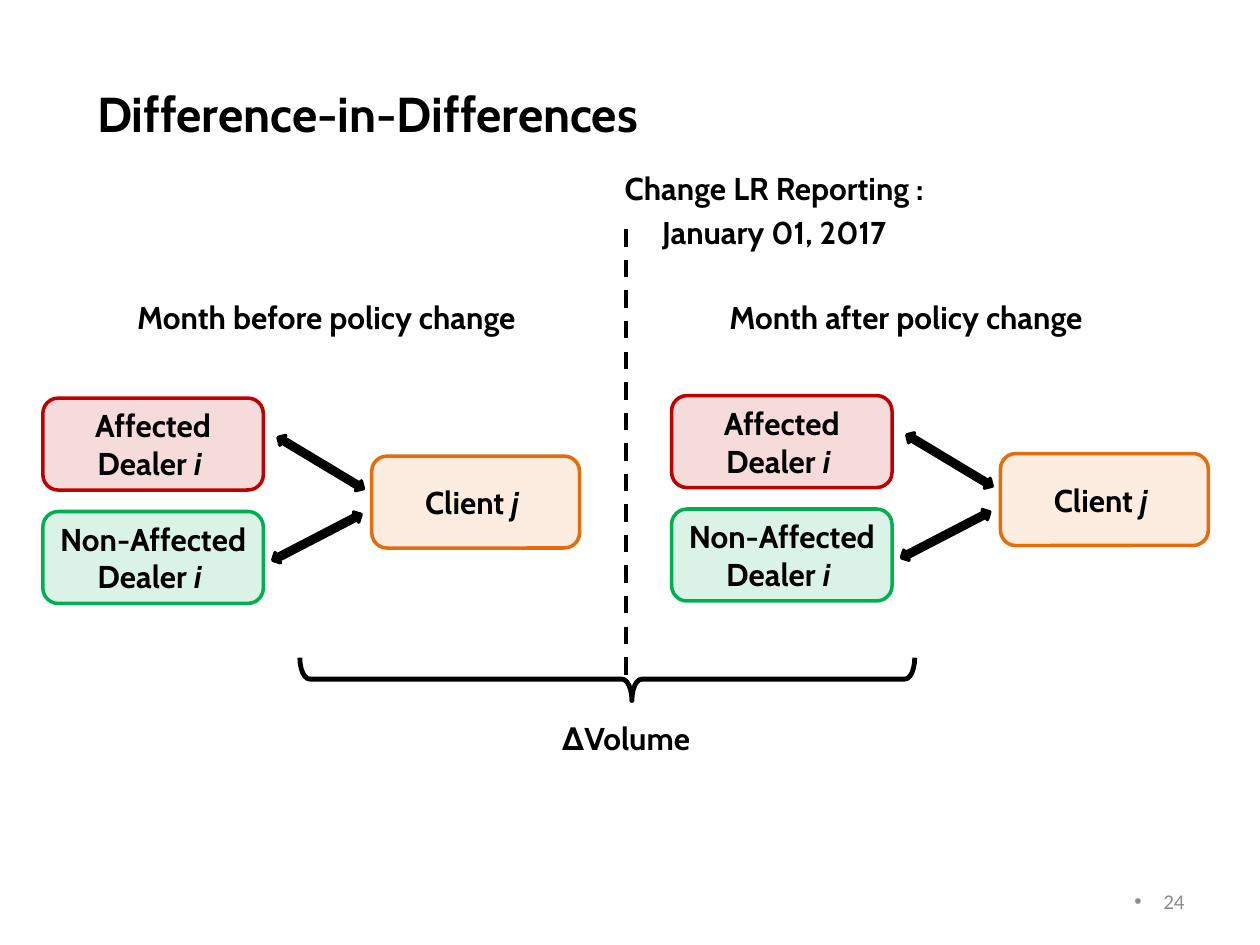
from lxml.etree import SubElement
from pptx import Presentation
from pptx.dml.color import RGBColor
from pptx.enum.dml import MSO_LINE
from pptx.enum.shapes import MSO_CONNECTOR, MSO_SHAPE
from pptx.enum.text import MSO_ANCHOR, PP_ALIGN
from pptx.oxml.ns import qn
from pptx.util import Inches, Pt

BLACK = "000000"
RED, GREEN, ORANGE, PEACH = "C00000", "00B050", "E46C0A", "FAC090"
GRAY = "8C8C8C"


def color(value):
    return RGBColor.from_string(value)


def place(shape, left, top, width, height):
    shape.left, shape.top = Inches(left), Inches(top)
    shape.width, shape.height = Inches(width), Inches(height)


def write(shape, *lines, size=18, font="Cabin", ink=BLACK, bold=True,
          align=PP_ALIGN.LEFT, anchor=MSO_ANCHOR.TOP, gap=0, side=0.1, bullet=None):
    """Each line is a list of (text, italic) spans."""
    frame = shape.text_frame
    frame.word_wrap = True
    frame.vertical_anchor = anchor
    frame.margin_left = frame.margin_right = Inches(side)
    for index, line in enumerate(lines):
        para = frame.add_paragraph() if index else frame.paragraphs[0]
        para.alignment = align
        if index:
            para.space_before = Pt(gap)
        if bullet:
            props = para._p.get_or_add_pPr()
            props.set("marL", str(Inches(0.23)))
            props.set("indent", str(-Inches(0.23)))
            SubElement(props, qn("a:buFont")).set("typeface", "Arial")
            SubElement(props, qn("a:buChar")).set("char", bullet)
        for text, italic in line:
            span = para.add_run()
            span.text = text
            span.font.name, span.font.size = font, Pt(size)
            span.font.bold, span.font.italic = bold, italic
            span.font.color.rgb = color(ink)


def add_label(page, box, *texts, **format):
    label = page.shapes.add_textbox(*map(Inches, box))
    write(label, *[[(text, False)] for text in texts], **format)


def add_shape(shapes, kind, box, fill=None, alpha=None, line=None, weight=2, rotation=0):
    shape = shapes.add_shape(kind, *map(Inches, box))
    shape.shadow.inherit = False
    shape.rotation = rotation
    if fill:
        shape.fill.solid()
        shape.fill.fore_color.rgb = color(fill)
        if alpha:
            tint = shape.fill._xPr.find(qn("a:solidFill"))[0]
            SubElement(tint, qn("a:alpha")).set("val", str(alpha * 1000))
    else:
        shape.fill.background()
    if line:
        shape.line.color.rgb = color(line)
        shape.line.width = Pt(weight)
    else:
        shape.line.fill.background()
    return shape


def add_title(page, box, text):
    title = page.shapes.title
    place(title, *box)
    write(title, [(text, False)], size=28, anchor=MSO_ANCHOR.MIDDLE)


def add_trading_pairs(page, left, top):
    """Two dealers, each joined to the same client by a two-way arrow."""
    shapes = page.shapes.add_group_shape().shapes
    parties = [
        ("Affected Dealer ", "i ", 0, 0, 1.75, RED, 14, RED),
        ("Non-Affected Dealer ", "i ", 0, 0.9, 1.75, GREEN, 14, GREEN),
        ("Client ", "j ", 2.61, 0.46, 1.65, PEACH, 27, ORANGE),
    ]
    for name, letter, x, y, width, fill, alpha, line in parties:
        party = add_shape(shapes, MSO_SHAPE.ROUNDED_RECTANGLE,
                          (left + x, top + y, width, 0.73), fill, alpha, line)
        write(party, [(name, False), (letter, True)], align=PP_ALIGN.CENTER,
              anchor=MSO_ANCHOR.MIDDLE, side=0.08)
    for x, y, rotation in [(1.81, 0.47, 31), (1.78, 1.06, 332.6)]:
        add_shape(shapes, MSO_SHAPE.LEFT_RIGHT_ARROW, (left + x, top + y, 0.79, 0.09),
                  BLACK, line=BLACK, rotation=rotation)


def add_policy_date(page, x, top, bottom):
    divider = page.shapes.add_connector(
        MSO_CONNECTOR.STRAIGHT, Inches(x), Inches(top), Inches(x), Inches(bottom))
    divider.line.color.rgb = color(BLACK)
    divider.line.width = Pt(2.5)
    divider.line.dash_style = MSO_LINE.DASH
    SubElement(divider._element.spPr, qn("a:effectLst"))
    add_label(page, (4.06, 1.29, 4.17, 0.77), "Change LR Reporting :", "January 01, 2017",
              align=PP_ALIGN.CENTER, gap=3.6)


def add_volume_change(page, brace_box, label_box):
    brace = add_shape(page.shapes, MSO_SHAPE.LEFT_BRACE, brace_box,
                      line=BLACK, weight=2.75, rotation=270)
    brace.adjustments[0], brace.adjustments[1] = 0.23, 0.54
    label = add_shape(page.shapes, MSO_SHAPE.ROUNDED_RECTANGLE, label_box)
    write(label, [("∆Volume", False)], align=PP_ALIGN.CENTER, anchor=MSO_ANCHOR.MIDDLE)


def main():
    deck = Presentation()
    deck.slide_width, deck.slide_height = Inches(10), Inches(7.5)
    page = deck.slides.add_slide(deck.slide_layouts[5])
    add_title(page, (0.67, 0.62, 8.61, 0.55), "Difference-in-Differences")
    add_label(page, (0.99, 2.32, 3.39, 0.4), "Month before policy change")
    add_label(page, (5.69, 2.32, 3.07, 0.4), "Month after policy change")
    add_volume_change(page, (4.65, 2.95, 0.34, 4.88), (3.8, 5.52, 2.34, 0.67))
    add_policy_date(page, 4.97, 1.82, 5.41)
    add_trading_pairs(page, 0.34, 3.16)
    add_trading_pairs(page, 5.33, 3.14)
    add_label(page, (7.17, 6.95, 2.33, 0.4), "24", size=12, font="Calibri", ink=GRAY,
              bold=False, align=PP_ALIGN.RIGHT, anchor=MSO_ANCHOR.MIDDLE, bullet="•")
    deck.save("out.pptx")


if __name__ == "__main__":
    main()
